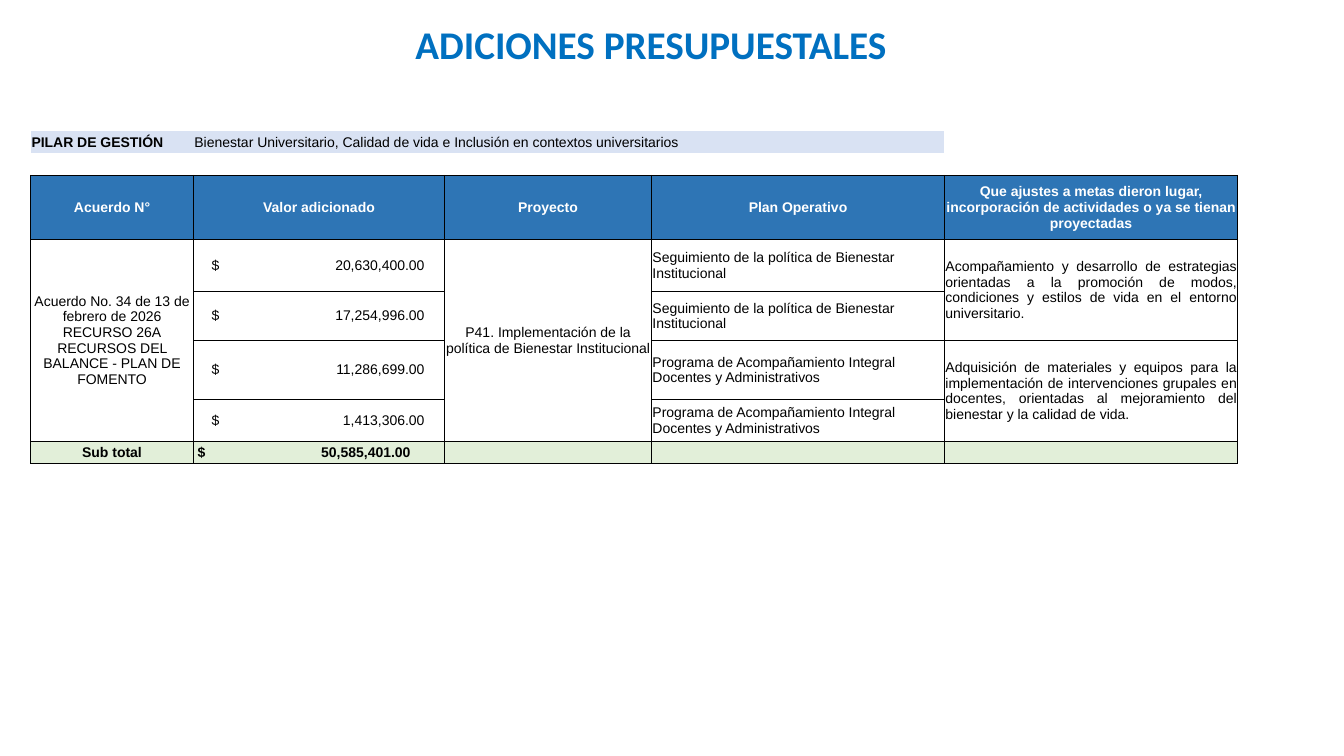
from lxml.etree import SubElement as Sub
from pptx import Presentation
from pptx.dml.color import RGBColor
from pptx.enum.text import MSO_ANCHOR as Anchor, PP_ALIGN as Align
from pptx.oxml.ns import qn
from pptx.util import Pt

BLUE, HEAD, PALE, GREEN = "0070C0", "2E75B5", "D9E2F3", "E2EFD9"
WHITE, BLACK = "FFFFFF", "000000"
COLS = [116.4, 179.3, 147.9, 209.3, 209.3]
ROWS = [15.8, 15.8, 45.6, 37.2, 35, 42.1, 30, 15.8]
HEADS = ["Acuerdo N°", "Valor adicionado", "Proyecto", "Plan Operativo",
         "Que ajustes a metas dieron lugar, incorporación de actividades "
         "o ya se tienan proyectadas"]
DEED = ("Acuerdo No. 34 de 13 de febrero de 2026\nRECURSO 26A\n"
        "RECURSOS DEL BALANCE - PLAN DE FOMENTO")
PROJECT = "P41. Implementación de la política de Bienestar Institucional"
POLICY = "Seguimiento de la política de Bienestar Institucional"
STAFF = "Programa de Acompañamiento Integral Docentes y Administrativos"
CARE = ("Acompañamiento y desarrollo de estrategias orientadas a la promoción "
        "de modos, condiciones y estilos de vida en el entorno universitario.")
GEAR = ("Adquisición de materiales y equipos para la implementación de "
        "intervenciones grupales en docentes, orientadas al mejoramiento del "
        "bienestar y la calidad de vida.")
ITEMS = [("20,630,400.00", POLICY), ("17,254,996.00", POLICY),
         ("11,286,699.00", STAFF), ("1,413,306.00", STAFF)]


def color(code):
    """Turn a hex string into a colour."""
    return RGBColor.from_string(code)


def style(par, size, face, code, bold, align):
    """Set the font and alignment of a paragraph."""
    par.alignment = align
    font = par.font
    font.size, font.name, font.bold = Pt(size), face, bold
    font.color.rgb = color(code)


def edge(cell):
    """Draw a thin black line on every side of a cell."""
    props = cell._tc.get_or_add_tcPr()
    for side in ("a:lnL", "a:lnR", "a:lnT", "a:lnB"):
        line = Sub(props, qn(side), w=str(Pt(0.5)))
        Sub(Sub(line, qn("a:solidFill")), qn("a:srgbClr"), val=BLACK)


def write(cell, text, align=Align.LEFT, bold=False, code=BLACK):
    """Put text into a cell."""
    par = cell.text_frame.paragraphs[0]
    par.text = text
    style(par, 10, "Arial", code, bold, align)


def money(cell, value, left, bold=False):
    """Put a peso sign at the left and an amount at a right tab."""
    cell.margin_left = Pt(left)
    props = cell.text_frame.paragraphs[0]._p.get_or_add_pPr()
    Sub(Sub(props, qn("a:tabLst")), qn("a:tab"), pos=str(Pt(152)), algn="r")
    write(cell, f"$\t{value}", bold=bold)


def title(slide, left, top, width, height):
    """Place the slide title."""
    box = slide.shapes.add_textbox(Pt(left), Pt(top), Pt(width), Pt(height))
    frame = box.text_frame
    frame.word_wrap = True
    frame.vertical_anchor = Anchor.MIDDLE
    par = frame.paragraphs[0]
    par.text = "ADICIONES PRESUPUESTALES"
    par.line_spacing = 0.9
    style(par, 28, "Calibri", BLUE, True, Align.CENTER)


def grid(slide, left, top):
    """Place an empty table with its fills and lines."""
    table = slide.shapes.add_table(
        len(ROWS), len(COLS), Pt(left), Pt(top),
        Pt(sum(COLS)), Pt(sum(ROWS))).table
    table.first_row = table.horz_banding = False
    table._tbl.tblPr[0].text = "{2D5ABB26-0587-4C30-8999-92F81FD0307C}"
    for col, width in zip(table.columns, COLS):
        col.width = Pt(width)
    fills = {0: PALE, 2: HEAD, len(ROWS) - 1: GREEN}
    for r, height in enumerate(ROWS):
        table.rows[r].height = Pt(height)
        for c in range(len(COLS)):
            cell = table.cell(r, c)
            cell.margin_left = cell.margin_right = cell.margin_top = Pt(0.72)
            cell.margin_bottom = 0
            cell.vertical_anchor = Anchor.MIDDLE
            if r > 1:
                edge(cell)
            cell.fill.solid()
            blank = (r, c) == (0, len(COLS) - 1)
            cell.fill.fore_color.rgb = color(
                WHITE if blank else fills.get(r, WHITE))
            write(cell, "")
    return table


def budget(slide, left, top):
    """Place the table of budget additions."""
    table = grid(slide, left, top)
    at = table.cell
    for start, end in [((0, 1), (0, 3)), ((3, 0), (6, 0)), ((3, 2), (6, 2)),
                       ((3, 4), (4, 4)), ((5, 4), (6, 4))]:
        at(*start).merge(at(*end))
    write(at(0, 0), "PILAR DE GESTIÓN", bold=True)
    write(at(0, 1), "Bienestar Universitario, Calidad de vida e Inclusión "
                    "en contextos universitarios")
    for c, text in enumerate(HEADS):
        write(at(2, c), text, Align.CENTER, True, WHITE)
    write(at(3, 0), DEED, Align.CENTER)
    write(at(3, 2), PROJECT, Align.CENTER)
    for r, (value, plan) in enumerate(ITEMS, 3):
        money(at(r, 1), value, 13)
        write(at(r, 3), plan)
    write(at(3, 4), CARE, Align.JUSTIFY)
    write(at(5, 4), GEAR, Align.JUSTIFY)
    write(at(7, 0), "Sub total", Align.CENTER, True)
    money(at(7, 1), "50,585,401.00", 3, True)


def main():
    """Build and save the slide."""
    deck = Presentation()
    deck.slide_width, deck.slide_height = Pt(960), Pt(540)
    slide = deck.slides.add_slide(deck.slide_layouts[6])
    title(slide, 51, 5, 828, 57)
    budget(slide, 21.8, 93.6)
    deck.save("out.pptx")


if __name__ == "__main__":
    main()
